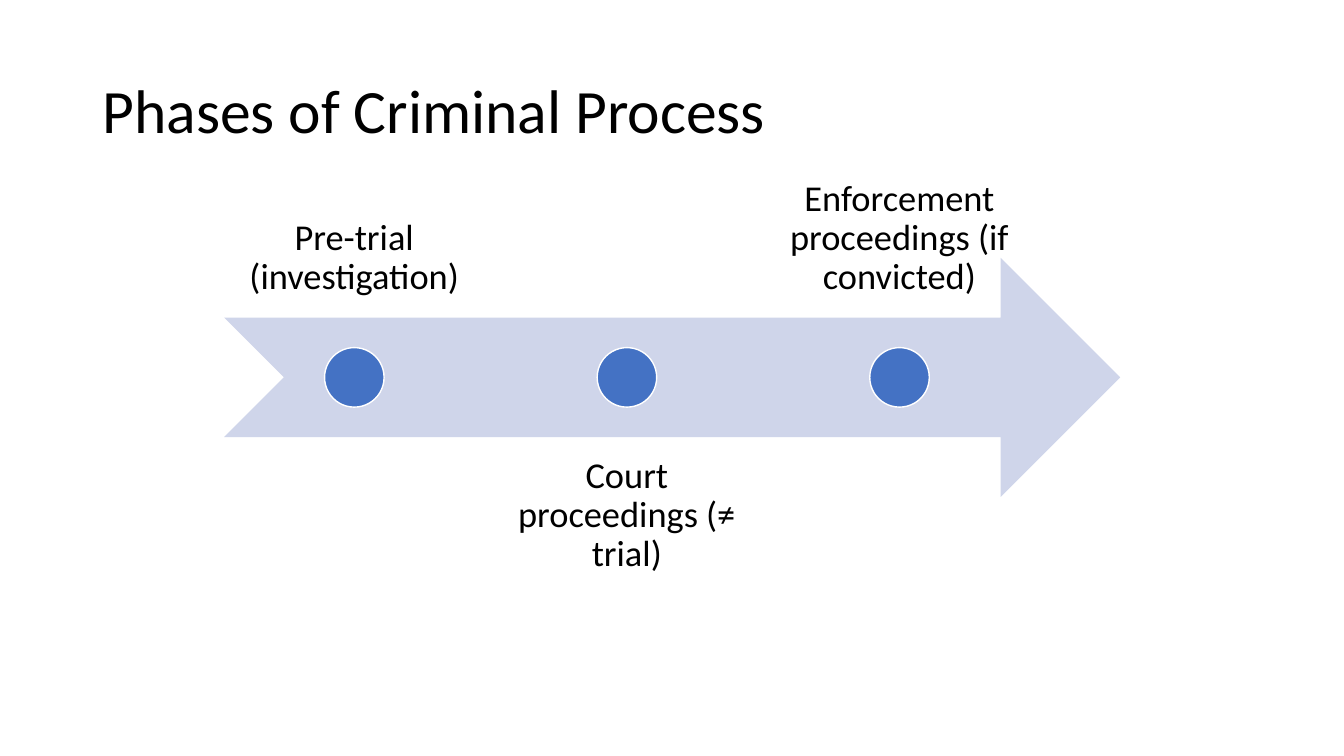
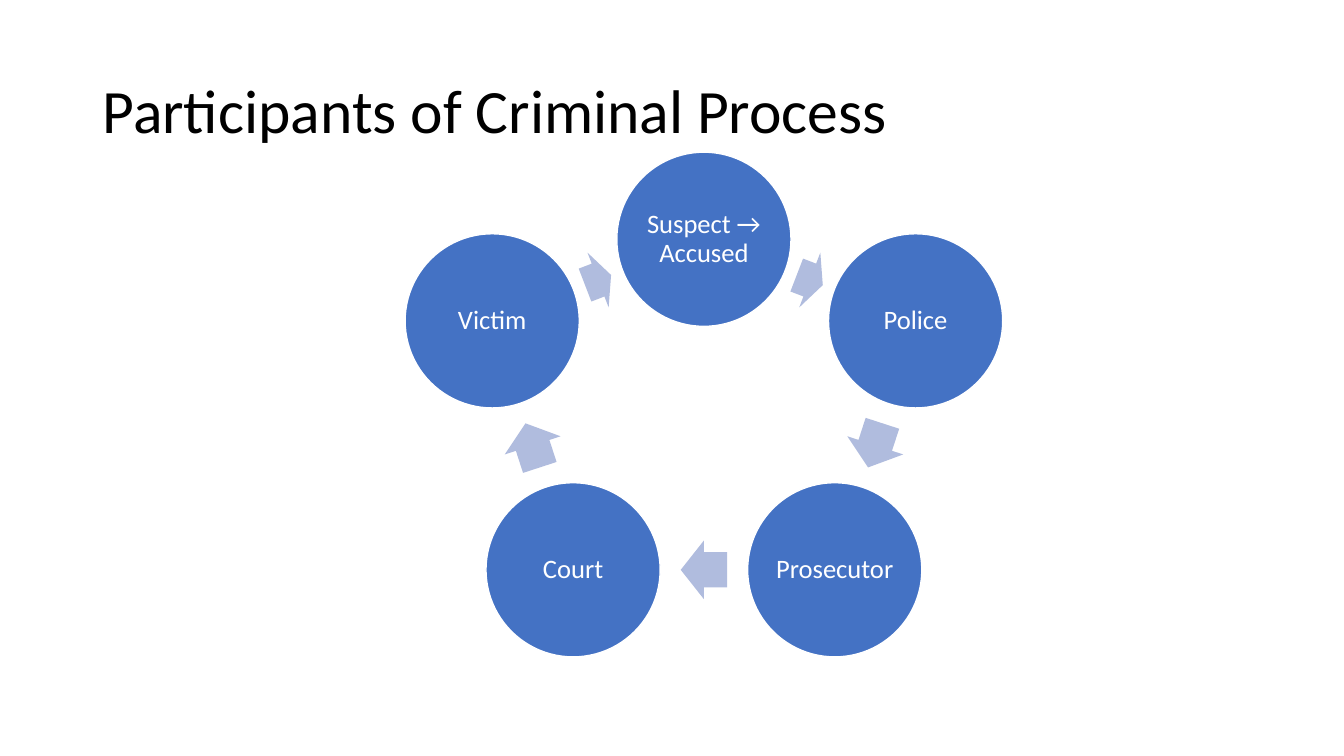
from dataclasses import dataclass
from math import atan2, cos, degrees, hypot, radians, sin

from pptx import Presentation
from pptx.dml.color import RGBColor
from pptx.enum.shapes import MSO_SHAPE
from pptx.enum.text import MSO_ANCHOR, MSO_AUTO_SIZE, PP_ALIGN
from pptx.util import Cm, Pt

# Content
PHASES_TITLE = "Phases of Criminal Process"
PHASES = [
    "Pre-trial (investigation)",
    "Court proceedings (≠ trial)",
    "Enforcement proceedings (if convicted)",
]
PARTICIPANTS_TITLE = "Participants of Criminal Process"
PARTICIPANTS = ["Suspect → Accused", "Police", "Prosecutor", "Court", "Victim"]


@dataclass(frozen=True)
class Theme:
    font: str = "Calibri"
    black: str = "000000"
    white: str = "FFFFFF"
    blue: str = "4472C4"
    band: str = "CFD5EA"
    arrow: str = "B0BCDE"
    title_size: float = 44
    label_size: float = 26
    circle_size: float = 19
    line_spacing: float = 0.9
    outline: float = 1


THEME = Theme()

# Layout, in centimetres
TITLE_BOX = (2.33, 1.01, 29.21, 3.68)
BAND_LEFT, BAND_TOP, BAND_WIDTH, BAND_HEIGHT = 5.65, 6.5, 22.58, 6.02
FIRST_DOT_X, DOT_PITCH, DOT_SIZE = 8.93, 6.87, 1.5
LABEL_WIDTH, LABEL_INSET = 6.55, 0.5
RING_X, RING_Y, RING_RADIUS = 17.74, 9.82, 5.61
TOP_DROP = 1.82  # the first circle sits below its pentagon corner
CIRCLE_SIZE, ARROW_HEIGHT, ARROW_SHARE = 4.39, 1.48, 0.53


def write_text(shape, text, *, size, color, align=PP_ALIGN.CENTER,
               anchor=MSO_ANCHOR.MIDDLE, inset=None):
    frame = shape.text_frame
    frame.word_wrap = True
    frame.auto_size = MSO_AUTO_SIZE.NONE
    frame.vertical_anchor = anchor
    if inset is not None:
        frame.margin_left = frame.margin_right = Cm(inset)
        frame.margin_top = frame.margin_bottom = Cm(inset)
    paragraph = frame.paragraphs[0]
    paragraph.alignment = align
    paragraph.line_spacing = THEME.line_spacing
    run = paragraph.add_run()
    run.text = text
    run.font.name = THEME.font
    run.font.size = Pt(size)
    run.font.color.rgb = RGBColor.from_string(color)


def add_centered(slide, kind, x, y, width, height, fill, outline=None):
    shape = slide.shapes.add_shape(
        kind, Cm(x - width / 2), Cm(y - height / 2), Cm(width), Cm(height))
    shape.shadow.inherit = False
    shape.fill.solid()
    shape.fill.fore_color.rgb = RGBColor.from_string(fill)
    if outline:
        shape.line.color.rgb = RGBColor.from_string(outline)
        shape.line.width = Pt(THEME.outline)
    else:
        shape.line.fill.background()
    return shape


def add_circle(slide, x, y, size):
    return add_centered(slide, MSO_SHAPE.OVAL, x, y, size, size,
                        THEME.blue, THEME.white)


def add_titled_slide(presentation, layout, title):
    slide = presentation.slides.add_slide(layout)
    write_text(slide.shapes.title, title, size=THEME.title_size,
               color=THEME.black, align=PP_ALIGN.LEFT)
    return slide


def draw_timeline(slide):
    middle_y = BAND_TOP + BAND_HEIGHT / 2
    add_centered(slide, MSO_SHAPE.NOTCHED_RIGHT_ARROW,
                 BAND_LEFT + BAND_WIDTH / 2, middle_y,
                 BAND_WIDTH, BAND_HEIGHT, THEME.band)
    # Labels alternate above and below the band
    for index, phase in enumerate(PHASES):
        x = FIRST_DOT_X + index * DOT_PITCH
        above = index % 2 == 0
        shift = 0.75 * BAND_HEIGHT * (-1 if above else 1)
        label = slide.shapes.add_textbox(
            Cm(x - LABEL_WIDTH / 2), Cm(BAND_TOP + shift),
            Cm(LABEL_WIDTH), Cm(BAND_HEIGHT))
        write_text(label, phase, size=THEME.label_size, color=THEME.black,
                   anchor=MSO_ANCHOR.BOTTOM if above else MSO_ANCHOR.TOP,
                   inset=LABEL_INSET)
        add_circle(slide, x, middle_y, DOT_SIZE)


def draw_cycle(slide):
    count = len(PARTICIPANTS)
    centers = []
    for index in range(count):
        angle = radians(360 * index / count)
        drop = TOP_DROP if index == 0 else 0
        centers.append((RING_X + RING_RADIUS * sin(angle),
                        RING_Y - RING_RADIUS * cos(angle) + drop))

    for index, (name, (x, y)) in enumerate(zip(PARTICIPANTS, centers)):
        circle = add_circle(slide, x, y, CIRCLE_SIZE)
        write_text(circle, name, size=THEME.circle_size, color=THEME.white,
                   inset=0)
        # Arrow halfway to the next circle
        next_x, next_y = centers[(index + 1) % count]
        gap = hypot(next_x - x, next_y - y) - CIRCLE_SIZE
        arrow = add_centered(slide, MSO_SHAPE.RIGHT_ARROW,
                             (x + next_x) / 2, (y + next_y) / 2,
                             gap * ARROW_SHARE, ARROW_HEIGHT, THEME.arrow)
        arrow.adjustments[0] = 0.6
        arrow.adjustments[1] = 0.5
        arrow.rotation = degrees(atan2(next_y - y, next_x - x)) % 360


def main():
    presentation = Presentation()
    presentation.slide_width = Cm(33.87)
    presentation.slide_height = Cm(19.05)

    # Shared title position
    layout = presentation.slide_layouts.get_by_name("Title Only")
    title = layout.placeholders[0]
    title.left, title.top, title.width, title.height = map(Cm, TITLE_BOX)

    draw_timeline(add_titled_slide(presentation, layout, PHASES_TITLE))
    draw_cycle(add_titled_slide(presentation, layout, PARTICIPANTS_TITLE))
    presentation.save("out.pptx")


if __name__ == "__main__":
    main()
